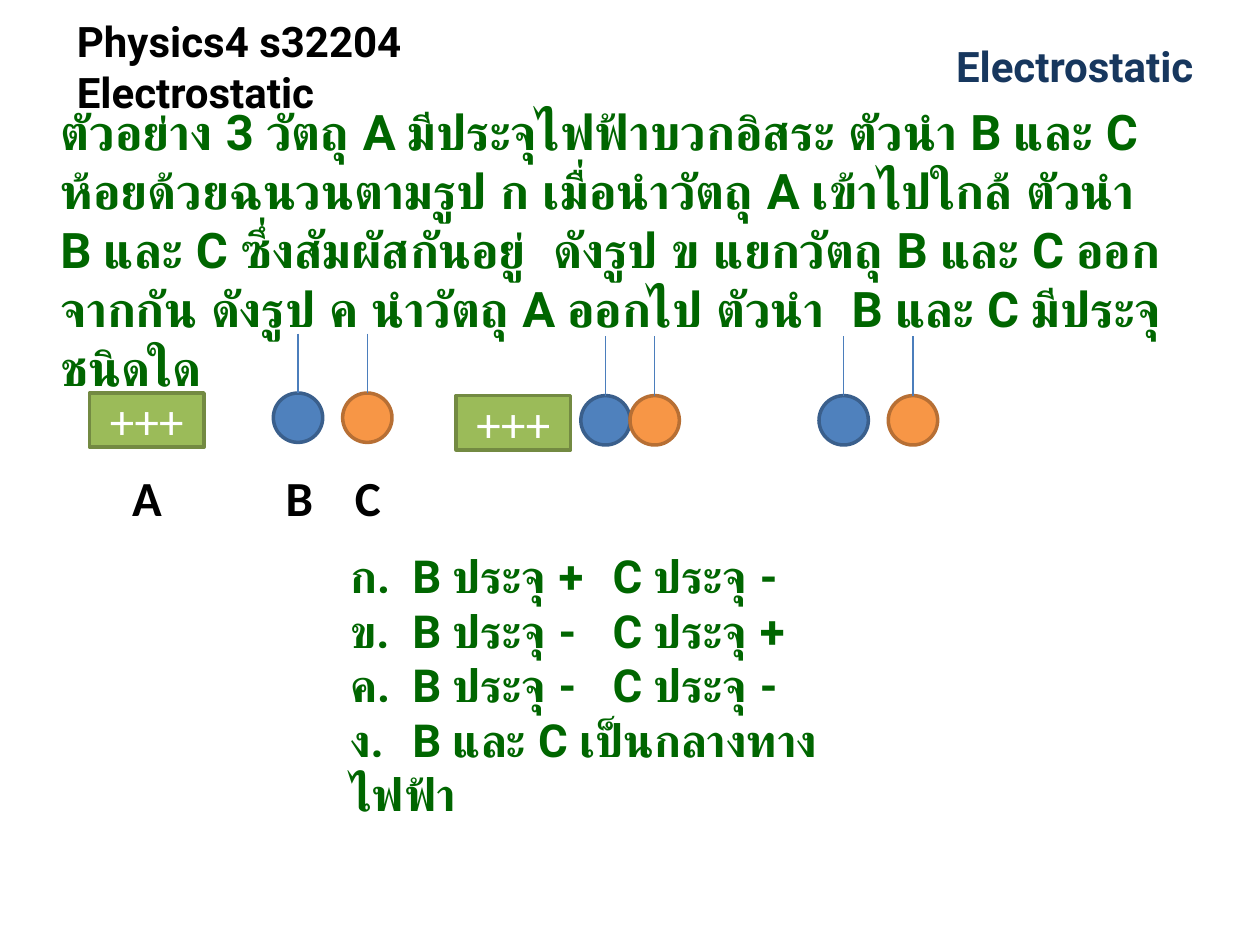
from pptx import Presentation
from pptx.dml.color import RGBColor
from pptx.enum.shapes import MSO_CONNECTOR, MSO_SHAPE
from pptx.enum.text import MSO_ANCHOR, MSO_AUTO_SIZE, PP_ALIGN
from pptx.oxml.ns import qn
from pptx.util import Pt
from lxml.etree import SubElement

BLACK = RGBColor(0x00, 0x00, 0x00)
WHITE = RGBColor(0xFF, 0xFF, 0xFF)
NAVY = RGBColor(0x17, 0x37, 0x5E)
DARK_GREEN = RGBColor(0x00, 0x66, 0x00)
BLUE, BLUE_EDGE = RGBColor(0x4F, 0x81, 0xBD), RGBColor(0x3A, 0x5F, 0x8C)
ORANGE, ORANGE_EDGE = RGBColor(0xF7, 0x96, 0x46), RGBColor(0xB7, 0x6F, 0x34)
GREEN, GREEN_EDGE = RGBColor(0x9B, 0xBB, 0x59), RGBColor(0x73, 0x8A, 0x42)
STRING_BLUE = RGBColor(0x4B, 0x7E, 0xBC)

BALL = 28.2
STRING = 34
BOX_W, BOX_H = 65.5, 31

QUESTION = (
    "ตัวอย่าง 3 วัตถุ A มีประจุไฟฟ้าบวกอิสระ ตัวนำ B และ C ห้อยด้วยฉนวนตามรูป ก "
    "เมื่อนำวัตถุ A เข้าไปใกล้ ตัวนำ  B และ C ซึ่งสัมผัสกันอยู่  ดังรูป ข "
    "แยกวัตถุ B และ C ออกจากกัน ดังรูป ค นำวัตถุ A ออกไป ตัวนำ  B และ C มีประจุชนิดใด"
)
ANSWERS = [
    "ก.\tB ประจุ +\tC ประจุ -",
    "ข.\tB ประจุ -\tC ประจุ +",
    "ค.\tB ประจุ -\tC ประจุ -",
    "ง.\tB และ C เป็นกลางทางไฟฟ้า",
]
ANSWER_TABS = (35.5, 150)

# Left of A (None when taken away), lefts of B and C, top of the row
SCENES = [
    (51.1, 156.2, 195.8, 224.6),
    (260.6, 331.9, 360, 226.1),
    (None, 468, 507.6, 226.1),
]
LABELS = [("A", 68.4), ("B", 156.2), ("C", 195.8)]


def add_run(p, text, size, color, font="Roboto", bold=True):
    r = p.add_run()
    r.text = text
    r.font.name, r.font.size, r.font.bold = font, Pt(size), bold
    r.font.color.rgb = color


def add_text(s, left, top, width, height, wrap=True):
    tf = s.shapes.add_textbox(Pt(left), Pt(top), Pt(width), Pt(height)).text_frame
    tf.word_wrap = wrap
    return tf


def add_title(s, text):
    sp = s.shapes.title
    sp.left, sp.top, sp.width, sp.height = Pt(36.7), Pt(15.1), Pt(272.2), Pt(45.4)
    tf = sp.text_frame
    tf.auto_size = MSO_AUTO_SIZE.NONE
    tf.vertical_anchor = MSO_ANCHOR.MIDDLE
    p = tf.paragraphs[0]
    p.alignment = PP_ALIGN.LEFT
    add_run(p, text, 24, BLACK)


def add_answers(s):
    p = add_text(s, 193, 309.6, 306, 133.2).paragraphs[0]
    tabs = SubElement(p._p.get_or_add_pPr(), qn("a:tabLst"))
    for pos in ANSWER_TABS:
        SubElement(tabs, qn("a:tab"), pos=str(int(Pt(pos))), algn="l")
    for i, answer in enumerate(ANSWERS):
        if i:
            p.add_line_break()
        add_run(p, answer, 26, DARK_GREEN)


def add_solid(s, kind, left, top, width, height, fill, edge):
    sp = s.shapes.add_shape(kind, Pt(left), Pt(top), Pt(width), Pt(height))
    sp.shadow.inherit = False
    sp.fill.solid()
    sp.fill.fore_color.rgb = fill
    sp.line.color.rgb = edge
    sp.line.width = Pt(2)
    return sp


def add_hanging_ball(s, left, top, fill, edge):
    add_solid(s, MSO_SHAPE.OVAL, left, top, BALL, BALL, fill, edge)
    x = Pt(left + BALL / 2)
    line = s.shapes.add_connector(MSO_CONNECTOR.STRAIGHT, x, Pt(top - STRING), x, Pt(top))
    line.line.color.rgb = STRING_BLUE
    line.line.width = Pt(0.75)
    SubElement(line._element.spPr, qn("a:effectLst"))


def add_charged_box(s, left, top):
    sp = add_solid(s, MSO_SHAPE.RECTANGLE, left, top, BOX_W, BOX_H, GREEN, GREEN_EDGE)
    tf = sp.text_frame
    tf.vertical_anchor = MSO_ANCHOR.MIDDLE
    p = tf.paragraphs[0]
    p.alignment = PP_ALIGN.CENTER
    add_run(p, "+++", 28, WHITE, "Calibri", False)


def main():
    prs = Presentation()
    prs.slide_width, prs.slide_height = Pt(720), Pt(540)
    s = prs.slides.add_slide(prs.slide_layouts[5])

    # Headings
    add_title(s, "Physics4 s32204 Electrostatic")
    tf = add_text(s, 416.9, 15.1, 272.2, 45.4)
    tf.vertical_anchor = MSO_ANCHOR.MIDDLE
    tf.paragraphs[0].alignment = PP_ALIGN.RIGHT
    add_run(tf.paragraphs[0], "Electrostatic", 24, NAVY)

    # Question and answers
    tf = add_text(s, 27.4, 54.7, 657.4, 118.8)
    add_run(tf.paragraphs[0], QUESTION, 28, DARK_GREEN)
    add_answers(s)

    # Three stages of the experiment
    for box, ball_b, ball_c, top in SCENES:
        add_hanging_ball(s, ball_b, top, BLUE, BLUE_EDGE)
        add_hanging_ball(s, ball_c, top, ORANGE, ORANGE_EDGE)
        if box is not None:
            add_charged_box(s, box, top)

    # Names of the objects
    for name, left in LABELS:
        tf = add_text(s, left, 263.7, 30.5, 41, wrap=False)
        add_run(tf.paragraphs[0], name, 28, BLACK, "Calibri")

    prs.save("out.pptx")


if __name__ == "__main__":
    main()
